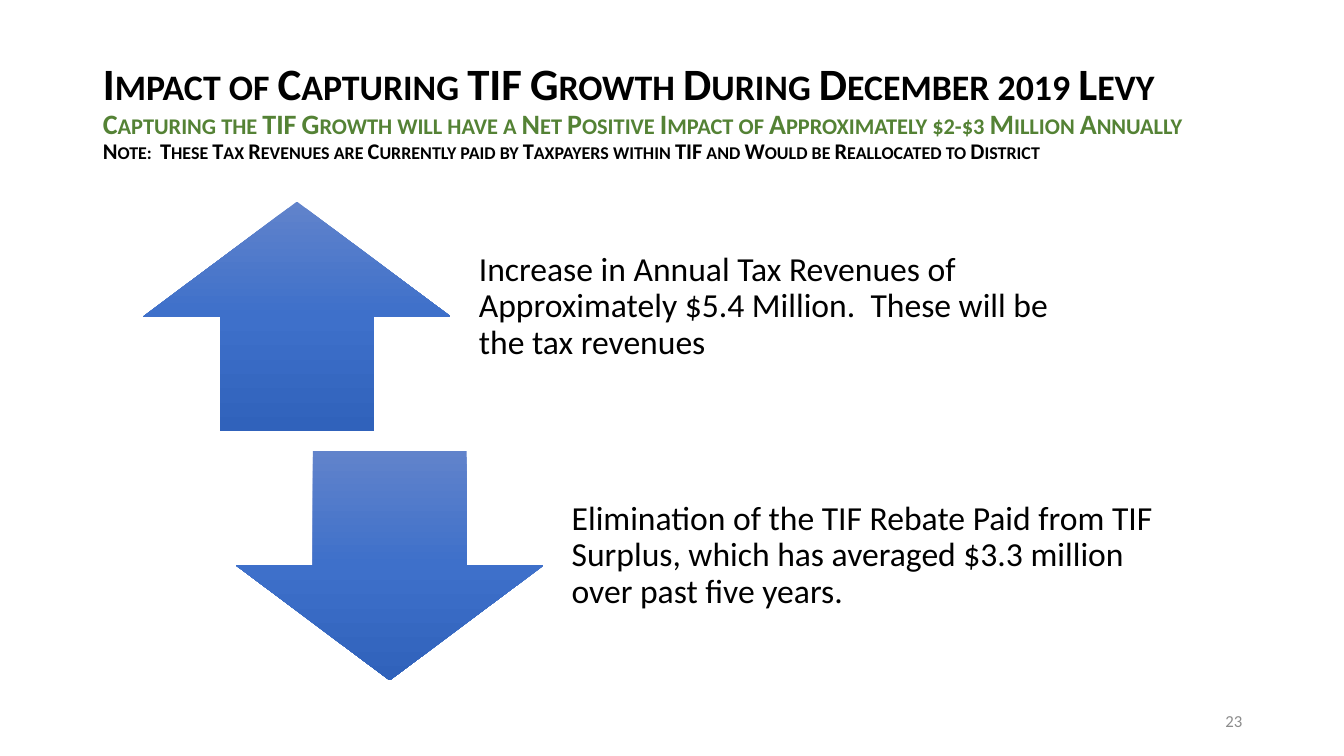
from copy import deepcopy

from pptx import Presentation
from pptx.dml.color import RGBColor
from pptx.enum.shapes import MSO_SHAPE
from pptx.enum.text import MSO_ANCHOR, MSO_AUTO_SIZE, PP_ALIGN
from pptx.oxml.ns import qn
from pptx.util import Inches, Pt

FONT = "Calibri"
BLACK, GREEN, GREY = "000000", "548235", "8C8C8C"
ARROW_STOPS = [(0, "6183CB"), (0.5, "3E70CA"), (1, "3062BB")]

TITLE_LINES = [
    ("Impact of Capturing TIF Growth During December 2019 Levy", 32, BLACK),
    ("Capturing the TIF Growth will have a Net Positive Impact of "
     "Approximately $2-$3 Million Annually", 20, GREEN),
    ("Note:  These Tax Revenues are Currently paid by Taxpayers within TIF "
     "and Would be Reallocated to District", 16, BLACK),
]
EFFECTS = [
    (MSO_SHAPE.UP_ARROW, "Increase in Annual Tax Revenues of Approximately "
     "$5.4 Million.  These will be the tax revenues"),
    (MSO_SHAPE.DOWN_ARROW, "Elimination of the TIF Rebate Paid from TIF "
     "Surplus, which has averaged $3.3 million over past five years."),
]


def rgb(value):
    return RGBColor.from_string(value)


def set_attrs(obj, values):
    for name, value in values.items():
        setattr(obj, name, value)


def add_run(p, text, size, color, **font):
    r = p.add_run()
    r.text = text
    set_attrs(r.font, {"name": FONT, "size": Pt(size), **font})
    r.font.color.rgb = rgb(color)
    return r


def format_frame(tf, **values):
    set_attrs(tf, {"word_wrap": True, "auto_size": MSO_AUTO_SIZE.NONE,
                   "vertical_anchor": MSO_ANCHOR.MIDDLE, **values})


def add_title(s):
    title = s.shapes.title
    set_attrs(title, {"left": Inches(0.92), "top": Inches(0.4),
                      "width": Inches(11.5), "height": Inches(1.45)})
    format_frame(title.text_frame)
    p = title.text_frame.paragraphs[0]
    set_attrs(p, {"alignment": PP_ALIGN.LEFT, "line_spacing": 0.9})
    for i, (text, size, color) in enumerate(TITLE_LINES):
        if i:
            p.add_line_break()
        r = add_run(p, text, size, color, bold=True)
        r._r.get_or_add_rPr().set("cap", "small")


def add_arrow(s, kind, left, top, width, height):
    arrow = s.shapes.add_shape(kind, Inches(left), Inches(top),
                               Inches(width), Inches(height))
    arrow.shadow.inherit = False
    arrow.line.fill.background()
    # Vertical gradient with a third, middle stop
    arrow.fill.gradient()
    arrow.fill.gradient_angle = 270
    stops = arrow._element.spPr.find(".//" + qn("a:gsLst"))
    stops.insert(1, deepcopy(stops[0]))
    for stop, (position, color) in zip(arrow.fill.gradient_stops, ARROW_STOPS):
        stop.position = position
        stop.color.rgb = rgb(color)


def add_text(s, text, left, top, width, height, size, color, para, **frame):
    box = s.shapes.add_textbox(Inches(left), Inches(top),
                               Inches(width), Inches(height))
    format_frame(box.text_frame, **frame)
    p = box.text_frame.paragraphs[0]
    set_attrs(p, para)
    add_run(p, text, size, color)


def main():
    prs = Presentation()
    set_attrs(prs, {"slide_width": Inches(13.33), "slide_height": Inches(7.5)})
    s = prs.slides.add_slide(prs.slide_layouts[5])
    add_title(s)

    # Each arrow with its statement, stepping down and to the right
    margin = Inches(0.19)
    for i, (kind, text) in enumerate(EFFECTS):
        left, top = 1.42 + 0.92 * i, 2 + 2.47 * i
        add_arrow(s, kind, left, top, 3.05, 2.28)
        add_text(s, text, left + 3.14, top, 6.44, 2.28, 24, BLACK,
                 {"line_spacing": 0.9}, margin_left=margin, margin_top=0,
                 margin_right=margin, margin_bottom=margin)

    # Slide number
    add_text(s, "23", 9.42, 6.95, 3, 0.4, 12, GREY,
             {"alignment": PP_ALIGN.RIGHT})
    prs.save("out.pptx")


if __name__ == "__main__":
    main()
